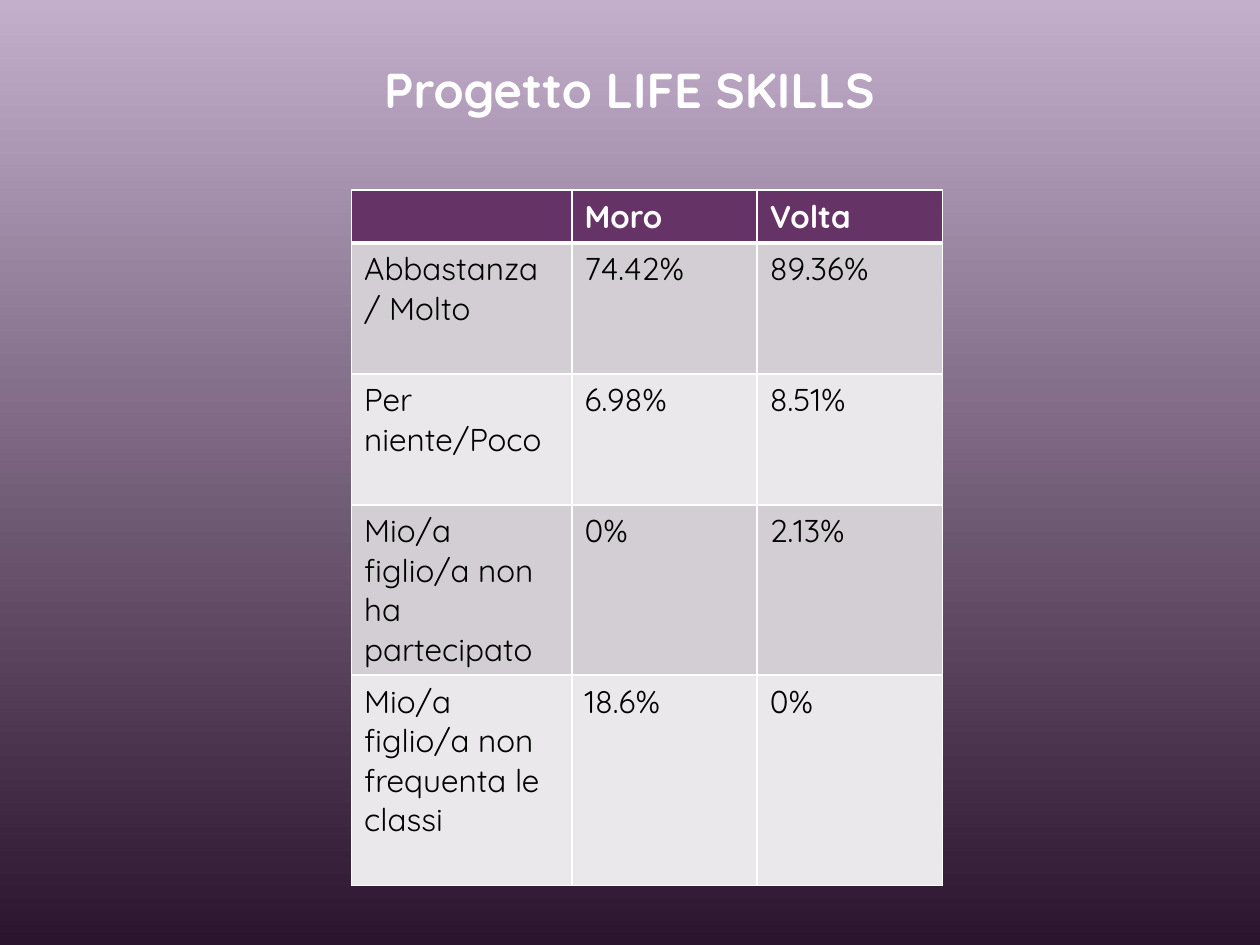
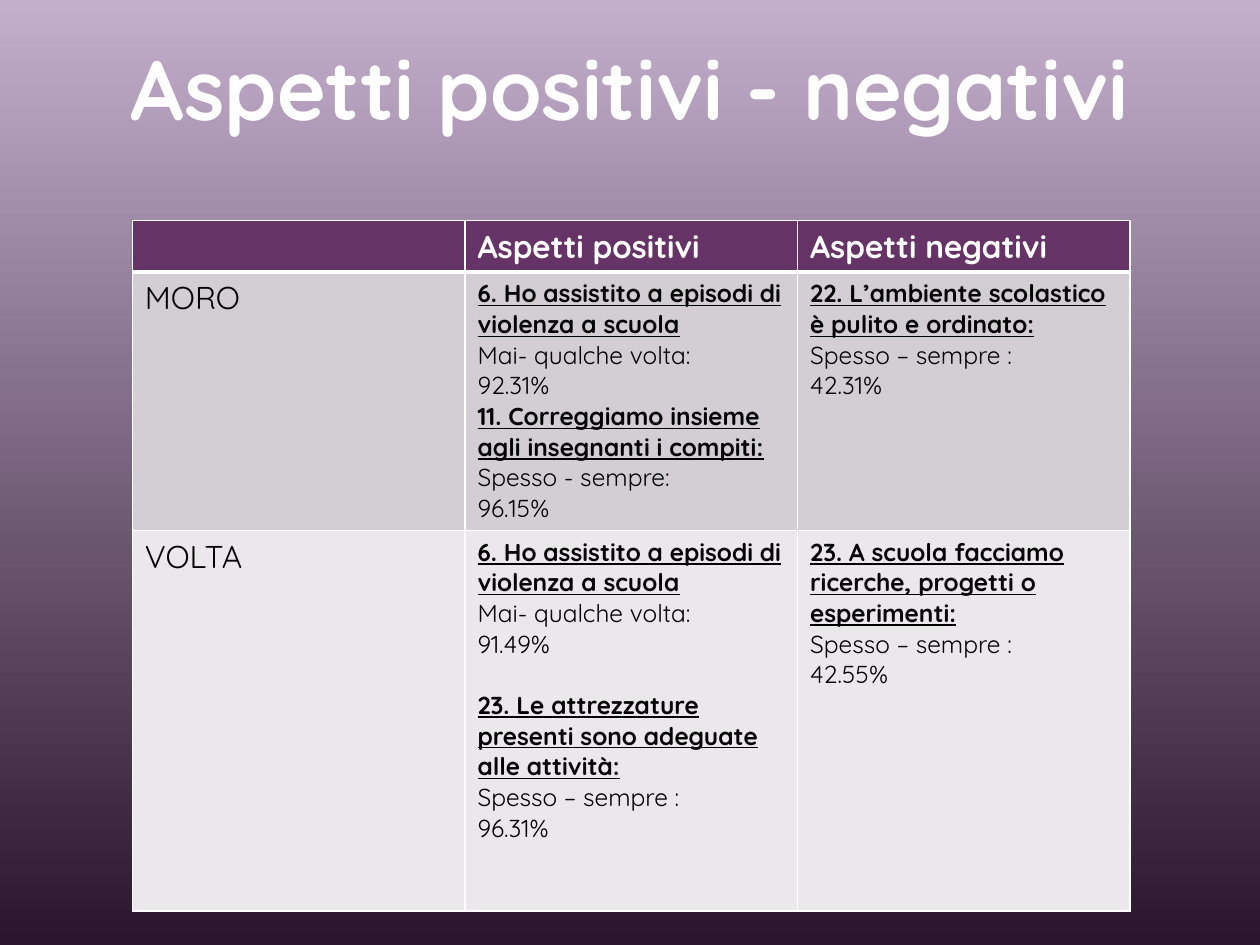
from dataclasses import dataclass

from lxml import etree
from pptx import Presentation
from pptx.dml.color import RGBColor
from pptx.enum.text import MSO_ANCHOR, PP_ALIGN
from pptx.oxml.ns import qn
from pptx.util import Inches, Pt

MIDDLE = MSO_ANCHOR.MIDDLE
CENTER = PP_ALIGN.CENTER


@dataclass(frozen=True)
class Theme:
    font: str = "Quicksand"
    white: str = "FFFFFF"
    black: str = "000000"
    head: str = "663366"
    bands: tuple[str, str] = ("D3CED3", "EAE8EA")
    sky: tuple[str, str] = ("C3AFCC", "2B142D")
    cell: int = 18
    note: int = 14
    thin: float = 1
    thick: float = 3
    gap: float = 17.5


@dataclass(frozen=True)
class Item:
    """One survey question with its answer and share."""
    ask: str
    reply: str
    share: str
    gap: float = 0


Cell = str | list[Item]


@dataclass(frozen=True)
class Grid:
    left: float
    top: float
    cols: list[float]
    rows: list[float]
    cells: list[list[Cell]]


@dataclass(frozen=True)
class Page:
    title: str
    size: int
    grid: Grid


THEME = Theme()
SEEN = "6. Ho assistito a episodi di violenza a scuola"
RARE = "Mai- qualche volta:"
OFTEN = "Spesso – sempre :"

PAGES = [
    Page("Progetto LIFE SKILLS", 28, Grid(
        2.79, 1.51, [1.75, 1.47, 1.47], [0.42, 1.04, 1.04, 1.35, 1.67], [
            ["", "Moro", "Volta"],
            ["Abbastanza / Molto", "74.42%", "89.36%"],
            ["Per niente/Poco", "6.98%", "8.51%"],
            ["Mio/a figlio/a non ha partecipato", "0%", "2.13%"],
            ["Mio/a figlio/a non frequenta le classi", "18.6%", "0%"],
        ])),
    Page("Aspetti positivi - negativi", 48, Grid(
        1.05, 1.75, [2.64] * 3, [0.41, 2.05, 3.02], [
            ["", "Aspetti positivi", "Aspetti negativi"],
            ["MORO",
             [Item(SEEN, RARE, "92.31%"),
              Item("11. Correggiamo insieme agli insegnanti i compiti:",
                   "Spesso - sempre:", "96.15%")],
             [Item("22. L’ambiente scolastico è pulito e ordinato:",
                   OFTEN, "42.31%")]],
            ["VOLTA",
             [Item(SEEN, RARE, "91.49%"),
              Item("23. Le attrezzature presenti sono adeguate alle attività:",
                   OFTEN, "96.31%", THEME.gap)],
             [Item("23. A scuola facciamo ricerche, progetti o esperimenti:",
                   OFTEN, "42.55%")]],
        ])),
]


def write(frame, text: str, *, size: int, color: str = THEME.black,
          bold: bool = False, line: bool = False, gap: float = 0,
          align=None, lead: float | None = None) -> None:
    """Fill the first free paragraph of a frame, or add one."""
    para = frame.paragraphs[-1]
    if para.runs:
        para = frame.add_paragraph()
    para.alignment = align
    para.line_spacing = lead
    if gap:
        para.space_before = Pt(gap)
    run = para.add_run()
    run.text = text
    font = run.font
    font.name, font.size = THEME.font, Pt(size)
    font.bold, font.underline = bold, line
    font.color.rgb = RGBColor.from_string(color)


def edge(cell, side: str, width: float) -> None:
    props = cell._tc.get_or_add_tcPr()
    line = etree.SubElement(props, qn(f"a:ln{side}"), w=str(Pt(width)))
    fill = etree.SubElement(line, qn("a:solidFill"))
    etree.SubElement(fill, qn("a:srgbClr"), val=THEME.white)


def fill_cell(cell, value: Cell, row: int) -> None:
    # Borders come before the fill; the header has a thick rule below
    heavy = {(0, "B"), (1, "T")}
    for side in "LRTB":
        edge(cell, side, THEME.thick if (row, side) in heavy else THEME.thin)
    head = row == 0
    tint = THEME.head if head else THEME.bands[(row - 1) % 2]
    cell.fill.solid()
    cell.fill.fore_color.rgb = RGBColor.from_string(tint)

    frame = cell.text_frame
    if isinstance(value, str):
        if value:
            write(frame, value, size=THEME.cell, bold=head,
                  color=THEME.white if head else THEME.black)
        return
    for item in value:
        write(frame, item.ask, size=THEME.note, bold=True, line=True,
              gap=item.gap)
        for text in (item.reply, item.share):
            write(frame, text, size=THEME.note)


def draw_grid(slide, grid: Grid) -> None:
    table = slide.shapes.add_table(
        len(grid.rows), len(grid.cols), Inches(grid.left), Inches(grid.top),
        Inches(sum(grid.cols)), Inches(sum(grid.rows))).table
    for col, width in zip(table.columns, grid.cols):
        col.width = Inches(width)
    for row, height in zip(table.rows, grid.rows):
        row.height = Inches(height)
    for r, values in enumerate(grid.cells):
        for c, value in enumerate(values):
            fill_cell(table.cell(r, c), value, r)


def draw_title(slide, page: Page) -> None:
    box = slide.shapes.add_textbox(
        Inches(0.85), Inches(0.1), Inches(8.29), Inches(1.25))
    frame = box.text_frame
    frame.word_wrap = True
    frame.vertical_anchor = MIDDLE
    write(frame, page.title, size=page.size, color=THEME.white, bold=True,
          align=CENTER, lead=0.95)


def paint(master) -> None:
    """Give all slides the gradient, light at the top."""
    fill = master.background.fill
    fill.gradient()
    fill.gradient_angle = 270
    for stop, color, place in zip(fill.gradient_stops, THEME.sky, (0, 1)):
        stop.color.rgb = RGBColor.from_string(color)
        stop.position = place


def main() -> None:
    deck = Presentation()
    deck.slide_width, deck.slide_height = Inches(10), Inches(7.5)
    paint(deck.slide_master)
    blank = deck.slide_layouts[6]
    for page in PAGES:
        slide = deck.slides.add_slide(blank)
        draw_title(slide, page)
        draw_grid(slide, page.grid)
    deck.save("out.pptx")


if __name__ == "__main__":
    main()
